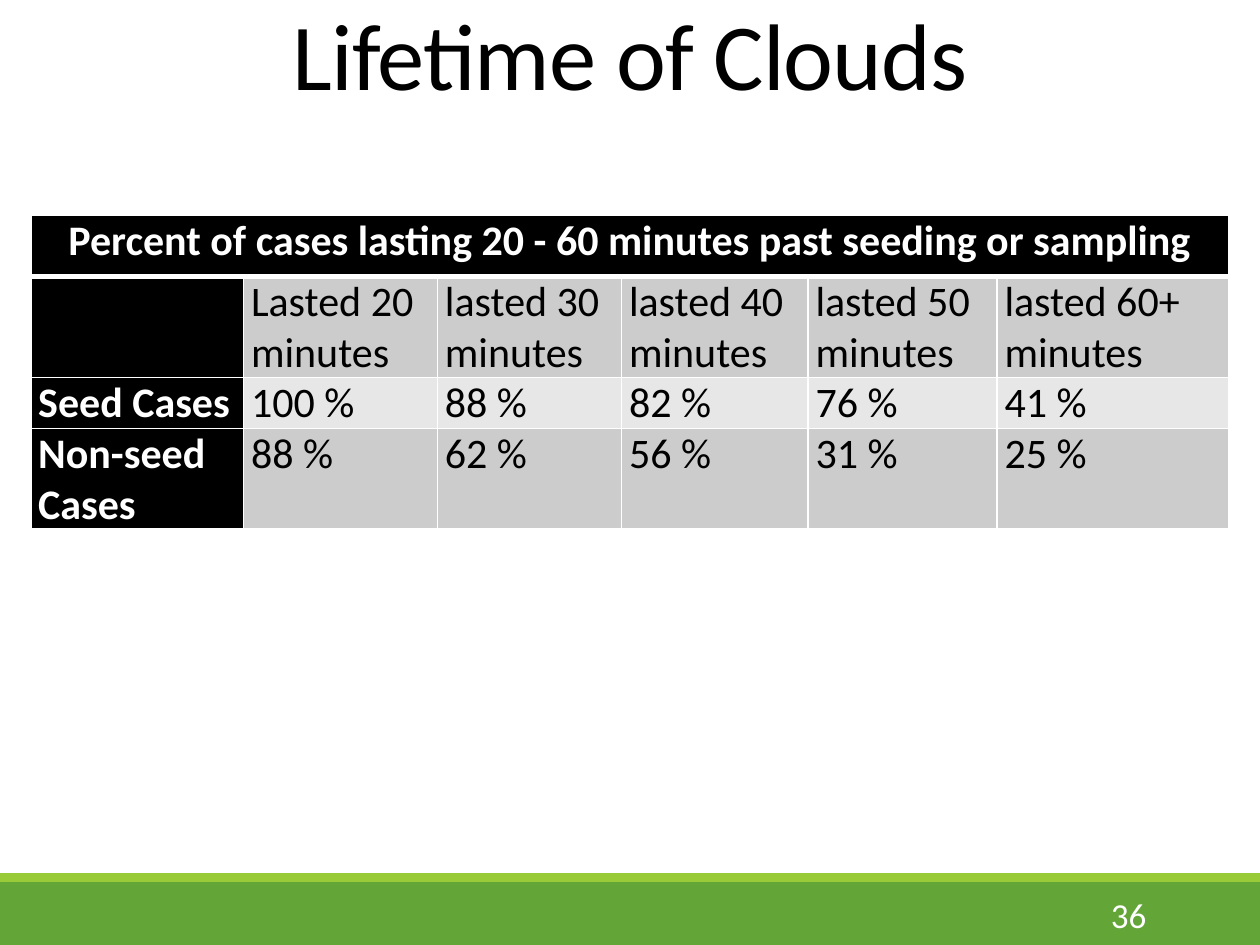
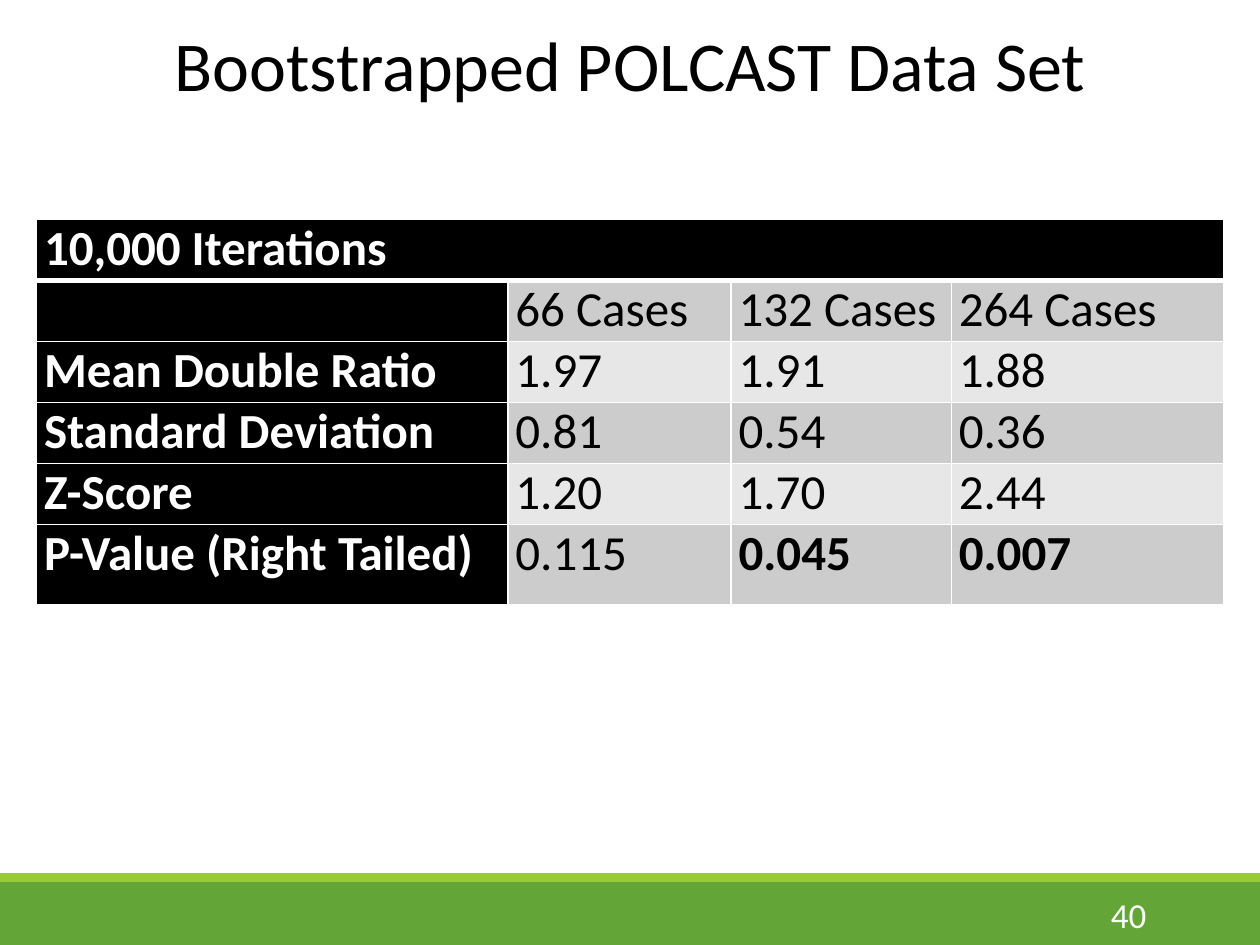
from dataclasses import dataclass

from lxml import etree
from pptx import Presentation
from pptx.dml.color import RGBColor
from pptx.enum.shapes import MSO_SHAPE
from pptx.enum.text import MSO_ANCHOR, MSO_AUTO_SIZE, PP_ALIGN
from pptx.oxml.ns import qn
from pptx.util import Cm, Pt

LEFT, CENTER, RIGHT = PP_ALIGN.LEFT, PP_ALIGN.CENTER, PP_ALIGN.RIGHT
TOP, MIDDLE = MSO_ANCHOR.TOP, MSO_ANCHOR.MIDDLE
NO_FIT = MSO_AUTO_SIZE.NONE
RECTANGLE = MSO_SHAPE.RECTANGLE

FONT = "Calibri"
BLACK, WHITE = "000000", "FFFFFF"
DARK_ROW, LIGHT_ROW = "CCCCCC", "E7E7E7"
SLIDE_WIDTH, SLIDE_HEIGHT = 25.4, 19.05
TITLE_ONLY = 5


@dataclass(frozen=True)
class Band:
    top: float
    height: float
    fill: str


@dataclass(frozen=True)
class Title:
    text: str
    top: float
    height: float
    size: float
    line_spacing: float = 1.0
    tracking: float = 0


@dataclass(frozen=True)
class ResultTable:
    """A heading across all columns, then rows that start with a label."""
    heading: str
    rows: list[list[str]]
    left: float
    top: float
    column_widths: list[float]
    row_heights: list[float]
    size: float
    heading_align: PP_ALIGN = LEFT
    significant: tuple[str, ...] = ()


@dataclass(frozen=True)
class ResultSlide:
    number: int
    title: Title
    table: ResultTable


FOOTER_BANDS = [Band(17.78, 1.27, "63A537"), Band(17.6, 0.18, "99CB38")]

SLIDES = [
    ResultSlide(
        36,
        Title("Lifetime of Clouds", 0.15, 1.57, 54, line_spacing=0.85, tracking=-0.5),
        ResultTable(
            "Percent of cases lasting 20 - 60 minutes past seeding or sampling",
            [
                ["", "Lasted 20 minutes", "lasted 30 minutes", "lasted 40 minutes",
                 "lasted 50 minutes", "lasted 60+ minutes"],
                ["Seed Cases", "100 %", "88 %", "82 %", "76 %", "41 %"],
                ["Non-seed Cases", "88 %", "62 %", "56 %", "31 %", "25 %"],
            ],
            left=0.62, top=4.34,
            column_widths=[4.29, 3.91, 3.71, 3.76, 3.81, 4.67],
            row_heights=[1.24, 2.03, 1.02, 2.03],
            size=24, heading_align=CENTER,
        ),
    ),
    ResultSlide(
        40,
        Title("Bootstrapped POLCAST Data Set", 0.3, 1.96, 40),
        ResultTable(
            "10,000 Iterations",
            [
                ["", "66 Cases", "132 Cases", "264 Cases"],
                ["Mean Double Ratio", "1.97", "1.91", "1.88"],
                ["Standard Deviation", "0.81", "0.54", "0.36"],
                ["Z-Score", "1.20", "1.70", "2.44"],
                ["P-Value (Right Tailed)", "0.115", "0.045", "0.007"],
            ],
            left=0.74, top=4.42,
            column_widths=[9.5, 4.5, 4.44, 5.49],
            row_heights=[1.23] * 5 + [1.63],
            size=28, significant=("0.045", "0.007"),
        ),
    ),
]


def color(value: str) -> RGBColor:
    return RGBColor.from_string(value)


def write_text(frame, text: str, *, size: float, ink: str = BLACK, bold: bool = False,
               align=LEFT, line_spacing: float = 1.0, tracking: float = 0) -> None:
    paragraph = frame.paragraphs[0]
    paragraph.alignment = align
    paragraph.line_spacing = line_spacing
    run = paragraph.add_run()
    run.text = text
    run.font.name = FONT
    run.font.size = Pt(size)
    run.font.bold = bold
    run.font.color.rgb = color(ink)
    if tracking:
        run._r.get_or_add_rPr().set("spc", str(round(tracking * 100)))


def add_footer(slide, number: int) -> None:
    for band in FOOTER_BANDS:
        strip = slide.shapes.add_shape(
            RECTANGLE, 0, Cm(band.top), Cm(SLIDE_WIDTH), Cm(band.height))
        strip.shadow.inherit = False
        strip.fill.solid()
        strip.fill.fore_color.rgb = color(band.fill)
        strip.line.fill.background()
    page = slide.shapes.add_textbox(Cm(20.62), Cm(17.93), Cm(2.74), Cm(1.02)).text_frame
    page.word_wrap = True
    page.vertical_anchor = MIDDLE
    write_text(page, str(number), size=20, ink=WHITE, align=RIGHT)


def place_title(slide, title: Title) -> None:
    holder = slide.shapes.title
    holder.left, holder.top = Cm(0), Cm(title.top)
    holder.width, holder.height = Cm(SLIDE_WIDTH), Cm(title.height)
    frame = holder.text_frame
    frame.word_wrap = True
    frame.auto_size = NO_FIT
    frame.vertical_anchor = TOP
    write_text(frame, title.text, size=title.size, align=CENTER,
               line_spacing=title.line_spacing, tracking=title.tracking)


def set_borders(cell, top: float = 1, bottom: float = 1) -> None:
    """Draw white cell borders; must come before the cell's fill."""
    properties = cell._tc.get_or_add_tcPr()
    for side, width in {"lnL": 1, "lnR": 1, "lnT": top, "lnB": bottom}.items():
        border = etree.SubElement(properties, qn(f"a:{side}"), w=str(Pt(width)))
        fill = etree.SubElement(border, qn("a:solidFill"))
        etree.SubElement(fill, qn("a:srgbClr"), val=WHITE)


def style_cell(cell, fill: str, top: float = 1, bottom: float = 1) -> None:
    set_borders(cell, top, bottom)
    cell.fill.solid()
    cell.fill.fore_color.rgb = color(fill)
    cell.margin_left = cell.margin_right = Cm(0.15)
    cell.margin_top = cell.margin_bottom = 0


def add_result_table(slide, result: ResultTable) -> None:
    widths, heights = result.column_widths, result.row_heights
    grid = slide.shapes.add_table(
        len(heights), len(widths), Cm(result.left), Cm(result.top),
        Cm(sum(widths)), Cm(sum(heights))).table
    grid.first_row = grid.horz_banding = False
    for column, width in zip(grid.columns, widths):
        column.width = Cm(width)
    for row, height in zip(grid.rows, heights):
        row.height = Cm(height)

    for column in range(len(widths)):
        style_cell(grid.cell(0, column), BLACK, bottom=3)
    heading = grid.cell(0, 0)
    heading.merge(grid.cell(0, len(widths) - 1))
    write_text(heading.text_frame, result.heading, size=result.size, ink=WHITE,
               bold=True, align=result.heading_align)

    for row, values in enumerate(result.rows, start=1):
        row_fill = DARK_ROW if row % 2 else LIGHT_ROW
        for column, value in enumerate(values):
            is_label = column == 0
            cell = grid.cell(row, column)
            style_cell(cell, BLACK if is_label else row_fill, top=3 if row == 1 else 1)
            if value:
                write_text(cell.text_frame, value, size=result.size,
                           ink=WHITE if is_label else BLACK,
                           bold=is_label or value in result.significant)


def main() -> None:
    deck = Presentation()
    deck.slide_width, deck.slide_height = Cm(SLIDE_WIDTH), Cm(SLIDE_HEIGHT)
    for content in SLIDES:
        slide = deck.slides.add_slide(deck.slide_layouts[TITLE_ONLY])
        add_footer(slide, content.number)
        place_title(slide, content.title)
        add_result_table(slide, content.table)
    deck.save("out.pptx")


if __name__ == "__main__":
    main()
